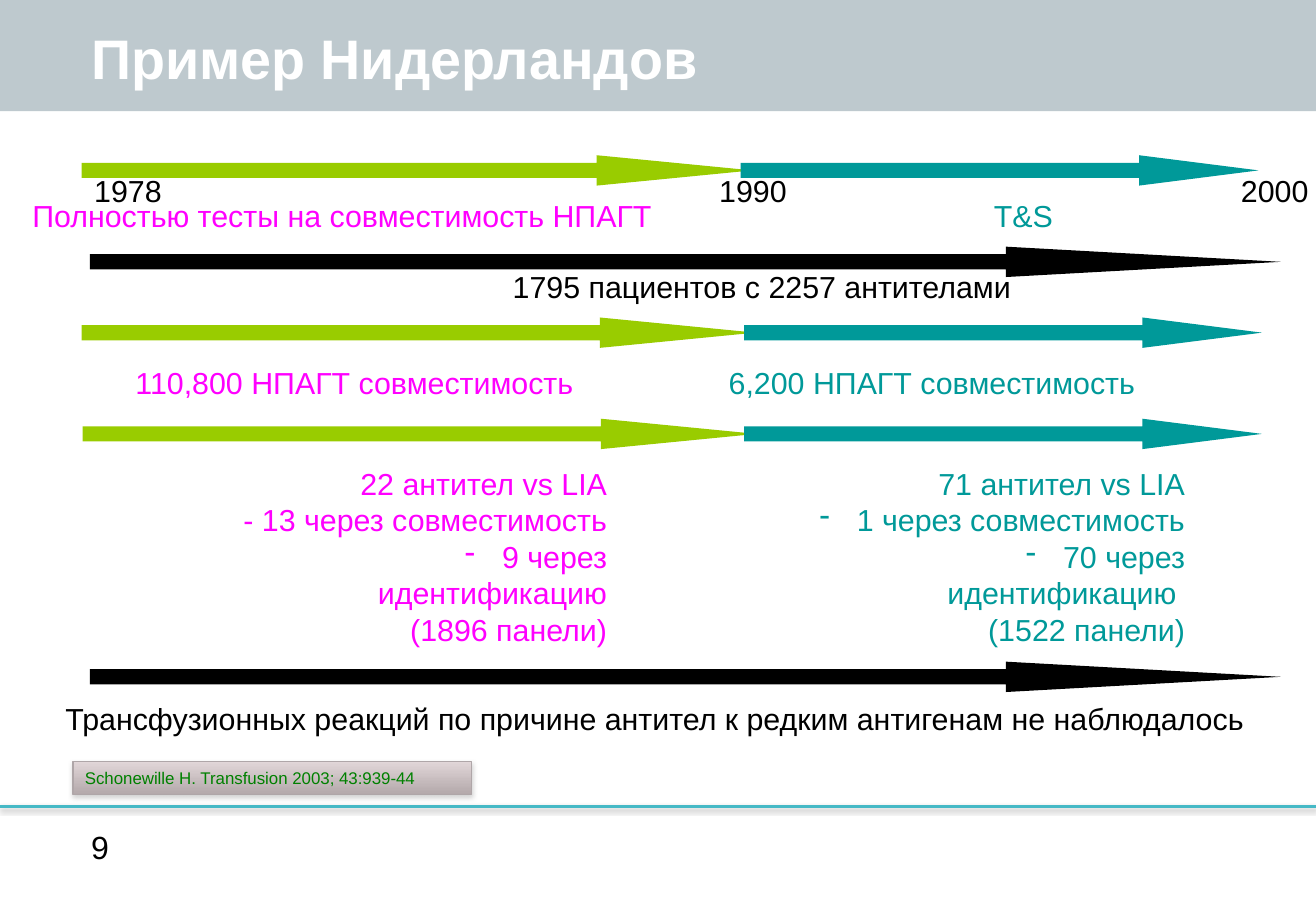
from dataclasses import dataclass

from lxml.etree import SubElement
from pptx import Presentation
from pptx.dml.color import RGBColor
from pptx.enum.shapes import MSO_CONNECTOR, MSO_SHAPE
from pptx.enum.text import MSO_ANCHOR as ANCHOR, MSO_AUTO_SIZE as FIT, PP_ALIGN as ALIGN
from pptx.oxml.ns import qn
from pptx.util import Pt


@dataclass(frozen=True)
class Theme:
    font: str = "Arial"
    black: str = "000000"
    white: str = "FFFFFF"
    header: str = "466673"
    rule: str = "46B9C6"
    green: str = "99CC00"
    teal: str = "009999"
    magenta: str = "FF00FF"
    source: str = "008000"
    source_top: str = "E1D6D8"
    source_bottom: str = "B4A9AB"
    source_line: str = "AFA6A8"
    shadow_gray: str = "808080"
    title_size: int = 33
    number_size: int = 19
    body_size: int = 18
    source_size: int = 10


class SlideBuilder:
    def __init__(self, slide, theme):
        self.shapes = slide.shapes
        self.theme = theme

    def format(self, p, size, color, align=ALIGN.LEFT, bold=False):
        p.alignment = align
        for r in p.runs:
            r.font.name = self.theme.font
            r.font.size = Pt(size)
            r.font.bold = bold
            r.font.color.rgb = RGBColor.from_string(color)

    def bullet(self, p):
        pPr = p._p.get_or_add_pPr()
        pPr.set("marL", str(Pt(17)))
        pPr.set("indent", str(-Pt(17)))
        SubElement(pPr, qn("a:buChar")).set("char", "-")

    def shadow(self, sp, color, alpha, distance):
        effects = SubElement(sp._element.spPr, qn("a:effectLst"))
        outer = SubElement(effects, qn("a:outerShdw"), blurRad=str(Pt(3.1)),
                           dist=str(Pt(distance)), dir="5400000", rotWithShape="0")
        rgb = SubElement(outer, qn("a:srgbClr"), val=color)
        SubElement(rgb, qn("a:alpha"), val=str(alpha * 1000))

    def shape(self, kind, x, y, w, h, color):
        sp = self.shapes.add_shape(kind, Pt(x), Pt(y), Pt(w), Pt(h))
        sp.shadow.inherit = False
        sp.fill.solid()
        sp.fill.fore_color.rgb = RGBColor.from_string(color)
        sp.line.fill.background()
        return sp

    def header(self, w, h):
        sp = self.shape(MSO_SHAPE.RECTANGLE, 0, 0, w, h, self.theme.header)
        rgb = sp._element.spPr.find(qn("a:solidFill"))[0]
        SubElement(rgb, qn("a:alpha"), val="35000")

    def rule(self, y, w):
        line = self.shapes.add_connector(MSO_CONNECTOR.STRAIGHT, 0, Pt(y), Pt(w), Pt(y))
        line.line.color.rgb = RGBColor.from_string(self.theme.rule)
        line.line.width = Pt(2)
        self.shadow(line, self.theme.black, 38, 1.6)

    def arrow(self, x, y, w, head, color, h=18):
        sp = self.shape(MSO_SHAPE.RIGHT_ARROW, x, y, w, h, color)
        sp.adjustments[0] = 0.5
        sp.adjustments[1] = head / h

    def heading(self, x, y, w, h, text, size, color, bold=False, anchor=ANCHOR.TOP):
        tf = self.shapes.add_textbox(Pt(x), Pt(y), Pt(w), Pt(h)).text_frame
        tf.word_wrap = True
        tf.vertical_anchor = anchor
        tf.margin_left = tf.margin_right = Pt(9)
        tf.margin_top = tf.margin_bottom = Pt(4.5)
        tf.text = text
        self.format(tf.paragraphs[0], size, color, bold=bold)

    def label(self, x, y, w, text, color):
        tf = self.shapes.add_textbox(Pt(x), Pt(y), Pt(w), Pt(29)).text_frame
        tf.word_wrap = False
        tf.auto_size = FIT.SHAPE_TO_FIT_TEXT
        tf.text = text
        self.format(tf.paragraphs[0], self.theme.body_size, color, ALIGN.RIGHT)

    def findings(self, x, y, w, items, color):
        tf = self.shapes.add_textbox(Pt(x), Pt(y), Pt(w), Pt(116)).text_frame
        tf.word_wrap = True
        for i, (text, bulleted) in enumerate(items):
            p = tf.add_paragraph() if i else tf.paragraphs[0]
            p.text = text
            if bulleted:
                self.bullet(p)
            self.format(p, self.theme.body_size, color, ALIGN.RIGHT)

    def citation(self, x, y, w, h, text):
        t = self.theme
        sp = self.shapes.add_shape(MSO_SHAPE.RECTANGLE, Pt(x), Pt(y), Pt(w), Pt(h))
        sp.fill.gradient()
        sp.fill.gradient_angle = 270
        for stop, color in zip(sp.fill.gradient_stops, (t.source_top, t.source_bottom)):
            stop.color.rgb = RGBColor.from_string(color)
        sp.line.color.rgb = RGBColor.from_string(t.source_line)
        sp.line.width = Pt(0.75)
        self.shadow(sp, t.shadow_gray, 35, 1.8)
        tf = sp.text_frame
        tf.vertical_anchor = ANCHOR.MIDDLE
        tf.text = text
        self.format(tf.paragraphs[0], t.source_size, t.source)


def main():
    prs = Presentation()
    prs.slide_width, prs.slide_height = Pt(780), Pt(540)
    t = Theme()
    b = SlideBuilder(prs.slides.add_slide(prs.slide_layouts[6]), t)

    # Slide frame
    b.heading(45, 486, 150, 32, "9", t.number_size, t.black)
    b.header(780, 66)
    b.rule(478, 780)
    b.heading(45, 11.6, 611, 45, "Пример Нидерландов", t.title_size, t.white,
              bold=True, anchor=ANCHOR.MIDDLE)
    b.citation(43.2, 451.4, 236.2, 19.4, "Schonewille H. Transfusion 2003; 43:939-44")

    # Period arrows: 1978-1990 and 1990-2000
    for y, first_x, first_w, second_x in ((92, 48.4, 397.5, 439), (188.2, 48.4, 399.4, 441),
                                          (248.2, 49, 399.4, 441)):
        b.arrow(first_x, y, first_w, 92.2, t.green)
        b.arrow(second_x, y, 307, 70.8, t.teal)

    # Arrows over the whole time span
    for y in (146.2, 392.2):
        b.arrow(53.3, y, 706, 163, t.black)

    # Years and captions
    for x, year in ((48.3, "1978"), (418.7, "1990"), (728, "2000")):
        b.label(x, 98.6, 54.7, year, t.black)
    for x, y, w, text, color in (
        (9.5, 113.2, 384, "Полностью тесты на совместимость НПАГТ", t.magenta),
        (581.5, 113.2, 49.7, "T&S", t.teal),
        (295.4, 155.4, 311, "1795 пациентов с 2257 антителами", t.black),
        (71, 212.4, 276, "110,800 НПАГТ совместимость", t.magenta),
        (422.4, 212.4, 257.6, "6,200 НПАГТ совместимость", t.teal),
        (29.8, 411.6, 715, "Трансфузионных реакций по причине антител к редким "
                           "антигенам не наблюдалось", t.black),
    ):
        b.label(x, y, w, text, color)

    # Antibody findings by period
    b.findings(135.1, 272.2, 231.8, (
        ("22 антител vs LIA", False),
        ("- 13 через совместимость", False),
        (" 9 через идентификацию\n(1896 панели)", True),
    ), t.magenta)
    b.findings(474.5, 272.2, 235, (
        ("71 антител vs LIA", False),
        (" 1 через совместимость", True),
        (" 70 через идентификацию \n(1522 панели)", True),
    ), t.teal)

    prs.save("out.pptx")


if __name__ == "__main__":
    main()
